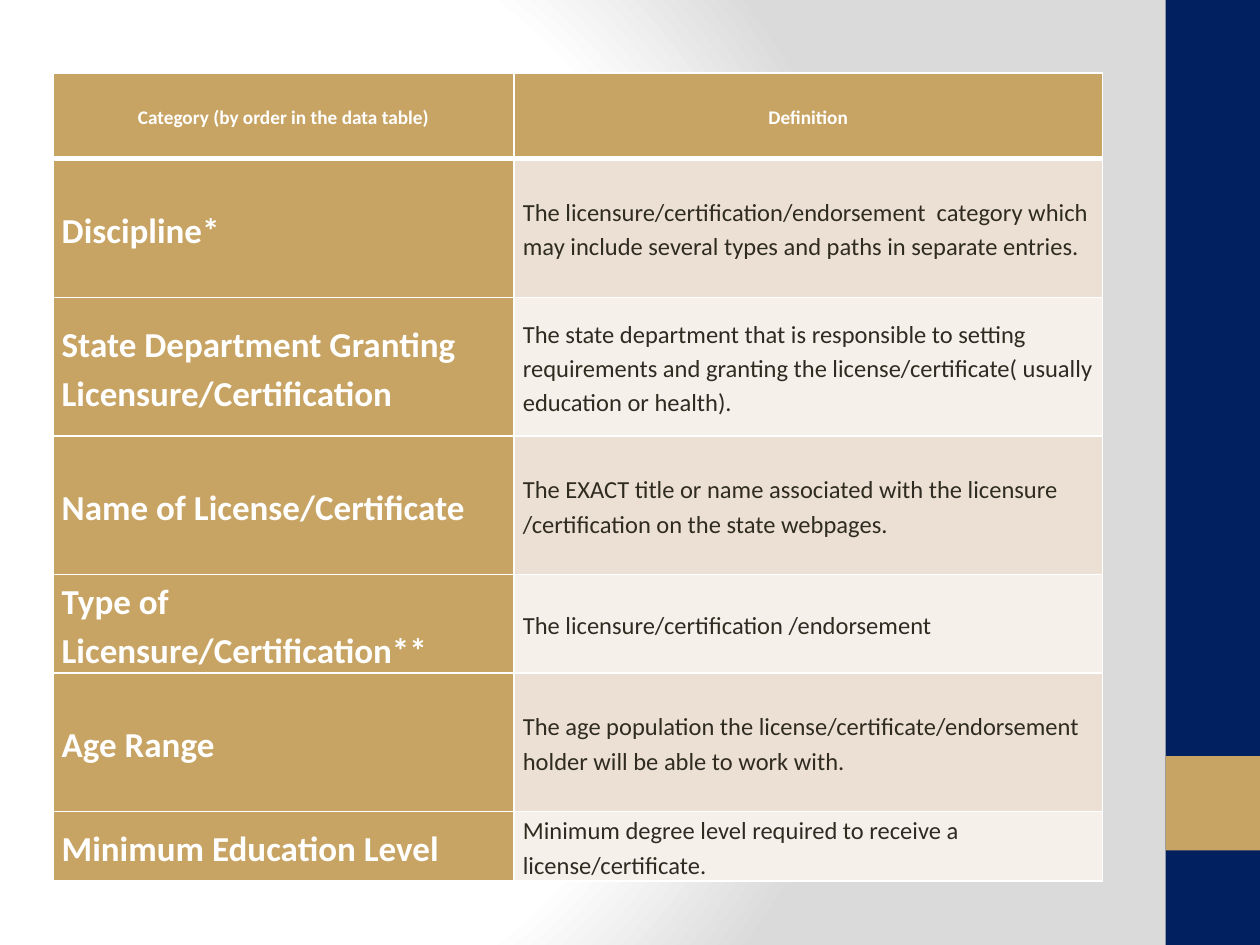
from lxml import etree
from pptx import Presentation
from pptx.dml.color import RGBColor as RGB
from pptx.enum.shapes import MSO_SHAPE as SHAPE
from pptx.enum.text import MSO_ANCHOR as ANCHOR, PP_ALIGN as ALIGN
from pptx.oxml import parse_xml
from pptx.oxml.ns import nsdecls, qn
from pptx.util import Inches, Pt

COLORS = {
    "white": "FFFFFF", "grey": "DADADA", "navy": "002060", "gold": "C8A464",
    "ink": "2F2B20", "band": "EBE0D3", "light": "F5F0EA",
}
HEADER = ("Category (by order in the data table)", "Definition")
DEFINITIONS = [
    ("Discipline*", "The licensure/certification/endorsement  category which may include "
     "several types and paths in separate entries."),
    ("State Department Granting Licensure/Certification",
     "The state department that is responsible to setting requirements and granting "
     "the license/certificate( usually education or health)."),
    ("Name of License/Certificate", "The EXACT title or name associated with the "
     "licensure /certification on the state webpages."),
    ("Type of Licensure/Certification**", "The licensure/certification /endorsement"),
    ("Age Range", "The age population the license/certificate/endorsement holder "
     "will be able to work with."),
    ("Minimum Education Level",
     "Minimum degree level required to receive a license/certificate."),
]
COL_WIDTHS = (3.66, 4.67)
ROW_HEIGHTS = (0.68, 1.1, 1.1, 1.1, 0.55, 1.1, 0.55)


class SlideBuilder:
    """Hold the style and the current slide, and draw each kind of element."""

    font = "Calibri"

    def __init__(self, slide):
        self.slide = slide

    def background(self, stops, focus):
        gs = "".join(f'<a:gs pos="{pos * 1000}"><a:srgbClr val="{COLORS[color]}"/></a:gs>'
                     for pos, color in stops)
        rect = " ".join(f'{side}="{pct * 1000}"' for side, pct in zip("ltrb", focus))
        self.slide._element.cSld.insert(0, parse_xml(
            f'<p:bg {nsdecls("p", "a")}><p:bgPr><a:gradFill rotWithShape="1">'
            f'<a:gsLst>{gs}</a:gsLst><a:path path="circle"><a:fillToRect {rect}/></a:path>'
            '</a:gradFill><a:effectLst/></p:bgPr></p:bg>'))

    def block(self, left, top, width, height, color):
        sp = self.slide.shapes.add_shape(SHAPE.RECTANGLE, *map(Inches, (left, top, width, height)))
        sp.shadow.inherit = False
        sp.fill.solid()
        sp.fill.fore_color.rgb = RGB.from_string(COLORS[color])
        sp.line.fill.background()

    def borders(self, cell, **widths):
        tc_pr = cell._tc.get_or_add_tcPr()
        for side in "LRTB":
            ln = etree.SubElement(tc_pr, qn(f"a:ln{side}"), w=str(Pt(widths.get(side, 1))))
            fill = etree.SubElement(ln, qn("a:solidFill"))
            etree.SubElement(fill, qn("a:srgbClr"), val=COLORS["white"])

    def cell(self, cell, text, size, fill, color="white", bold=True, align=ALIGN.LEFT, **widths):
        self.borders(cell, **widths)
        cell.fill.solid()
        cell.fill.fore_color.rgb = RGB.from_string(COLORS[fill])
        cell.vertical_anchor = ANCHOR.MIDDLE
        cell.margin_left = cell.margin_right = Inches(0.07)
        cell.margin_top = cell.margin_bottom = 0
        cell.text = text
        p = cell.text_frame.paragraphs[0]
        p.alignment = align
        p.line_spacing = 1.15
        p.space_before = p.space_after = Pt(6)
        p.font.name, p.font.size, p.font.bold = self.font, Pt(size), bold
        p.font.color.rgb = RGB.from_string(COLORS[color])

    def table(self, left, top, header, rows):
        table = self.slide.shapes.add_table(
            len(rows) + 1, len(header), Inches(left), Inches(top),
            Inches(sum(COL_WIDTHS)), Inches(sum(ROW_HEIGHTS))).table
        for col, width in zip(table.columns, COL_WIDTHS):
            col.width = Inches(width)
        for row, height in zip(table.rows, ROW_HEIGHTS):
            row.height = Inches(height)
        for c, text in enumerate(header):
            self.cell(table.cell(0, c), text, 11, "gold", align=ALIGN.CENTER, B=3)
        for r, (category, definition) in enumerate(rows, 1):
            top_line = 3 if r == 1 else 1
            self.cell(table.cell(r, 0), category, 20, "gold", T=top_line)
            self.cell(table.cell(r, 1), definition, 14, "band" if r % 2 else "light",
                      color="ink", bold=False, T=top_line)


def main():
    prs = Presentation()
    prs.slide_width, prs.slide_height = Inches(10), Inches(7.5)
    s = SlideBuilder(prs.slides.add_slide(prs.slide_layouts[6]))
    s.background([(0, "white"), (75, "white"), (100, "grey")], (20, 50, 100, 50))
    s.block(9.25, 0, 0.75, 7.5, "navy")
    s.block(9.25, 6, 0.75, 0.75, "gold")
    s.table(0.42, 0.58, HEADER, DEFINITIONS)
    prs.save("out.pptx")


if __name__ == "__main__":
    main()
